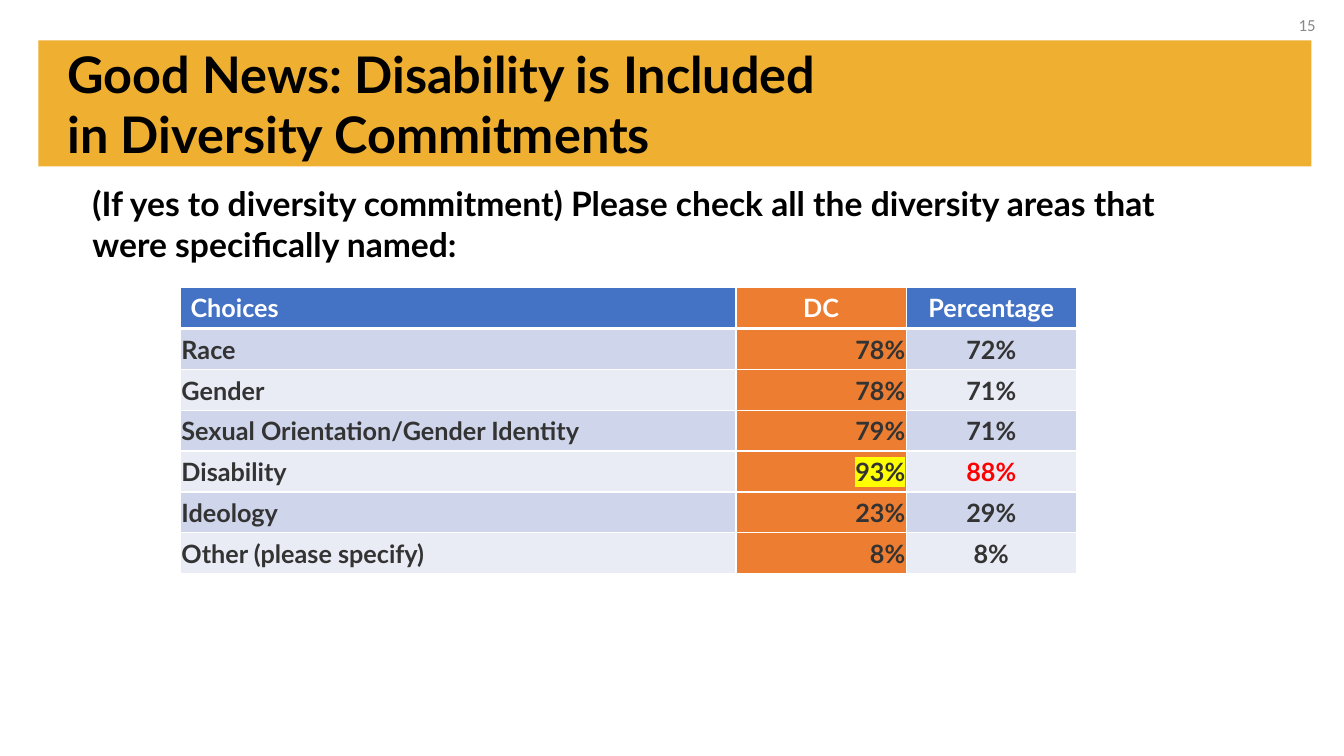
import dataclasses

import pptx
import pptx.dml.color
import pptx.enum.shapes
import pptx.enum.text
import pptx.oxml
import pptx.oxml.ns
import pptx.util

Pt = pptx.util.Pt
ALIGN = pptx.enum.text.PP_ALIGN
MIDDLE = pptx.enum.text.MSO_ANCHOR.MIDDLE


@dataclasses.dataclass(frozen=True)
class Theme:
    font: str = "Lato"
    number_font: str = "Calibri"
    title_size: float = 36
    question_size: float = 24
    table_size: float = 18
    number_size: float = 12
    black: str = "000000"
    white: str = "FFFFFF"
    gray: str = "888888"
    dark: str = "333333"
    gold: str = "EFAF30"
    blue: str = "4472C4"
    orange: str = "ED7D31"
    red: str = "FF0000"
    yellow: str = "FFFF00"
    bands: tuple = ("CFD5EA", "E9EBF5")


def rgb(color):
    return pptx.dml.color.RGBColor.from_string(color)


def color_xml(tag, color, inner="<a:srgbClr val='{}'/>", attrs=""):
    ns = pptx.oxml.ns.nsdecls("a")
    return pptx.oxml.parse_xml(
        f"<a:{tag} {ns} {attrs}>{inner.format(color)}</a:{tag}>")


def write(tf, text, *, font, size, color, bold=True, align=ALIGN.LEFT,
          anchor=None, highlight=None):
    """Fill a text frame; a newline becomes a line break."""
    tf.word_wrap = True
    if anchor is not None:
        tf.vertical_anchor = anchor
    p = tf.paragraphs[0]
    p.alignment = align
    for i, line in enumerate(text.split("\n")):
        if i:
            p.add_line_break()
        r = p.add_run()
        r.text = line
        r.font.size = Pt(size)
        r.font.bold = bold
        r.font.color.rgb = rgb(color)
        r.font.name = font
        if highlight:
            latin = r.font._element.find(pptx.oxml.ns.qn("a:latin"))
            latin.addprevious(color_xml("highlight", highlight))


class Deck:
    """Holds the theme and the current slide; lengths are in points."""

    def __init__(self, theme, width, height):
        self.theme = theme
        self.prs = pptx.Presentation()
        self.prs.slide_width, self.prs.slide_height = Pt(width), Pt(height)
        self.s = None

    def add_slide(self):
        self.s = self.prs.slides.add_slide(self.prs.slide_layouts[5])

    def title(self, text, x, y, w, h):
        sp = self.s.shapes.title
        sp.left, sp.top, sp.width, sp.height = Pt(x), Pt(y), Pt(w), Pt(h)
        sp.text_frame.auto_size = pptx.enum.text.MSO_AUTO_SIZE.NONE
        write(sp.text_frame, text, font=self.theme.font,
              size=self.theme.title_size, color=self.theme.black,
              anchor=MIDDLE)

    def title_band(self, x, y, w, h):
        sp = self.s.shapes.add_shape(
            pptx.enum.shapes.MSO_SHAPE.RECTANGLE, Pt(x), Pt(y), Pt(w), Pt(h))
        sp.shadow.inherit = False
        sp.fill.solid()
        sp.fill.fore_color.rgb = rgb(self.theme.gold)
        sp.line.fill.background()
        self.s.shapes.title.element.addprevious(sp.element)

    def text(self, text, x, y, w, h, **style):
        sp = self.s.shapes.add_textbox(Pt(x), Pt(y), Pt(w), Pt(h))
        write(sp.text_frame, text, **style)

    def cell(self, cell, text, fill, top=1, bottom=1, **style):
        write(cell.text_frame, text, font=self.theme.font,
              size=self.theme.table_size, **style)
        cell.vertical_anchor = MIDDLE
        cell.fill.solid()
        cell.fill.fore_color.rgb = rgb(fill)
        tc_pr = cell._tc.get_or_add_tcPr()
        edges = {"lnL": 1, "lnR": 1, "lnT": top, "lnB": bottom}
        for i, (tag, width) in enumerate(edges.items()):
            tc_pr.insert(i, color_xml(
                tag, self.theme.white,
                "<a:solidFill><a:srgbClr val='{}'/></a:solidFill>",
                f"w='{Pt(width)}'"))

    def table(self, header, rows, x, y, col_widths, row_height, marks):
        t = self.theme
        count = len(rows) + 1
        table = self.s.shapes.add_table(
            count, len(header), Pt(x), Pt(y), Pt(sum(col_widths)),
            Pt(row_height * count)).table
        for col, width in zip(table.columns, col_widths):
            col.width = Pt(width)
        for row in table.rows:
            row.height = Pt(row_height)

        # Header row with a thick rule below
        aligns = (ALIGN.LEFT, ALIGN.CENTER, ALIGN.CENTER)
        for c, text in enumerate(header):
            self.cell(table.cell(0, c), text, t.orange if c == 1 else t.blue,
                      bottom=3, color=t.white, align=aligns[c])

        # Banded body rows around the orange column
        aligns = (ALIGN.LEFT, ALIGN.RIGHT, ALIGN.CENTER)
        for n, values in enumerate(rows, 1):
            for c, text in enumerate(values):
                cell = table.cell(n, c)
                cell.margin_left = cell.margin_right = Pt(0.75)
                cell.margin_top, cell.margin_bottom = Pt(0.75), 0
                style = {"color": t.dark, "align": aligns[c],
                         **marks.get((values[0], header[c]), {})}
                fill = t.orange if c == 1 else t.bands[(n - 1) % 2]
                self.cell(cell, text, fill, top=3 if n == 1 else 1, **style)


def main():
    theme = Theme()
    deck = Deck(theme, 960, 540)
    deck.add_slide()

    # Title on its gold band
    deck.title("Good News: Disability is Included\nin Diversity Commitments",
               41, 28.8, 836.6, 90)
    deck.title_band(27.4, 28.8, 909.4, 90)

    # Survey question
    deck.text("(If yes to diversity commitment) Please check all the diversity "
              "areas that were specifically named:", 59, 127.4, 780.5, 65.5,
              font=theme.font, size=theme.question_size, color=theme.black)

    # Survey results
    deck.table(
        ("Choices", "DC", "Percentage"),
        (("Race", "78%", "72%"),
         ("Gender", "78%", "71%"),
         ("Sexual Orientation/Gender Identity", "79%", "71%"),
         ("Disability", "93%", "88%"),
         ("Ideology", "23%", "29%"),
         ("Other (please specify)", "8%", "8%")),
        128.9, 205.4, (396.8, 121.6, 121.6), 29.2,
        marks={("Disability", "DC"): {"highlight": theme.yellow},
               ("Disability", "Percentage"): {"color": theme.red}})

    # Slide number
    deck.text("15", 730.8, 3.6, 216, 28.8, font=theme.number_font,
              size=theme.number_size, color=theme.gray, bold=False,
              align=ALIGN.RIGHT, anchor=MIDDLE)

    deck.prs.save("out.pptx")


if __name__ == "__main__":
    main()
